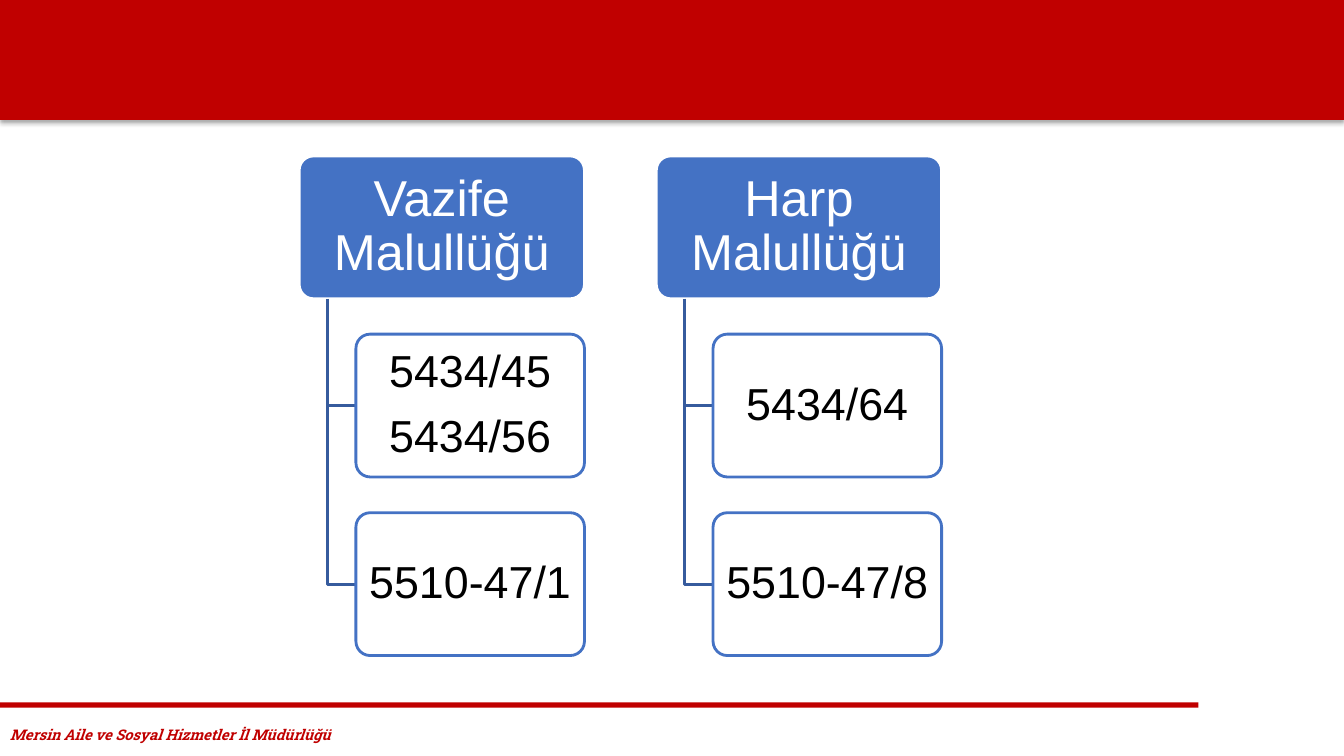
from lxml.etree import SubElement
from pptx import Presentation
from pptx.dml.color import RGBColor
from pptx.enum.shapes import MSO_SHAPE
from pptx.enum.text import MSO_ANCHOR, PP_ALIGN
from pptx.oxml.ns import qn
from pptx.util import Cm, Pt

COLORS = {
    "red": "C00000",
    "blue": "4472C4",
    "branch": "365B9D",
    "white": "FFFFFF",
    "black": "000000",
}
COLUMNS = [
    ("Vazife Malullüğü", [["5434/45", "5434/56"], ["5510-47/1"]]),
    ("Harp Malullüğü", [["5434/64"], ["5510-47/8"]]),
]

# Lengths in centimetres
COLUMN_LEFT, COLUMN_PITCH = 7.54, 9.0
BOX_HEIGHT = 3.6
HEADER_TOP, HEADER_WIDTH = 3.93, 7.19
LEAF_TOP, LEAF_PITCH, LEAF_WIDTH = 8.42, 4.5, 5.76
LEAF_INDENT, STEM_INDENT = 1.43, 0.72


def rgb(name):
    return RGBColor.from_string(COLORS[name])


def add_span(para, text, size, color, font):
    span = para.add_run()
    span.text = text
    span.font.size = Pt(size)
    span.font.name = font
    span.font.color.rgb = rgb(color)
    return span


def add_bar(page, top, width, height):
    bar = page.shapes.add_shape(MSO_SHAPE.RECTANGLE, 0, Cm(top), Cm(width), Cm(height))
    bar.shadow.inherit = False
    bar.fill.solid()
    bar.fill.fore_color.rgb = rgb("red")
    bar.line.fill.background()
    return bar


def add_drop_shadow(shape):
    effects = shape._element.spPr.find(qn("a:effectLst"))
    shadow = SubElement(effects, qn("a:outerShdw"), blurRad=str(Pt(3.5)),
                        dist=str(Pt(2.2)), dir="5400000", algn="t", rotWithShape="0")
    color = SubElement(shadow, qn("a:srgbClr"), val=COLORS["black"])
    SubElement(color, qn("a:alpha"), val="32000")


def add_box(page, left, top, width, lines, size, fill, line, color):
    """Add a rounded box with one centred paragraph per line of text."""
    box = page.shapes.add_shape(MSO_SHAPE.ROUNDED_RECTANGLE, Cm(left), Cm(top),
                                Cm(width), Cm(BOX_HEIGHT))
    box.adjustments[0] = 0.1
    box.shadow.inherit = False
    box.fill.solid()
    box.fill.fore_color.rgb = rgb(fill)
    box.line.color.rgb = rgb(line)
    box.line.width = Pt(2)

    frame = box.text_frame
    frame.word_wrap = True
    frame.vertical_anchor = MSO_ANCHOR.MIDDLE
    frame.margin_left = frame.margin_right = Cm(0.15)
    frame.margin_top = frame.margin_bottom = Cm(0.1)
    for index, text in enumerate(lines):
        para = frame.add_paragraph() if index else frame.paragraphs[0]
        para.alignment = PP_ALIGN.CENTER
        para.line_spacing = 0.9
        para.space_before = Pt(12 if index else 0)
        add_span(para, text, size, color, "Arial")


def add_branch(page, left, top, right, bottom):
    """Add an open elbow going down and then right."""
    builder = page.shapes.build_freeform(Cm(left), Cm(top))
    builder.add_line_segments([(Cm(left), Cm(bottom)), (Cm(right), Cm(bottom))],
                              close=False)
    branch = builder.convert_to_shape()
    branch.shadow.inherit = False
    branch.fill.background()
    branch.line.color.rgb = rgb("branch")
    branch.line.width = Pt(2)


def add_column(page, left, title, leaves):
    add_box(page, left, HEADER_TOP, HEADER_WIDTH, [title], 36, "blue", "white", "white")
    leaf_left = left + LEAF_INDENT
    for row, lines in enumerate(leaves):
        top = LEAF_TOP + row * LEAF_PITCH
        add_branch(page, left + STEM_INDENT, HEADER_TOP + BOX_HEIGHT,
                   leaf_left, top + BOX_HEIGHT / 2)
        add_box(page, leaf_left, top, LEAF_WIDTH, lines, 32, "white", "blue", "black")


def add_footer(page, text):
    footer = page.shapes.add_textbox(0, Cm(18.16), Cm(13.64), Cm(0.74))
    footer.text_frame.word_wrap = True
    span = add_span(footer.text_frame.paragraphs[0], text, 10.5, "red", "Roboto Slab")
    span.font.bold = True
    span.font.italic = True


def main():
    deck = Presentation()
    deck.slide_width, deck.slide_height = Cm(33.87), Cm(19.05)
    page = deck.slides.add_slide(deck.slide_layouts[6])

    add_footer(page, "Mersin Aile ve Sosyal Hizmetler İl Müdürlüğü")
    add_drop_shadow(add_bar(page, 0, 33.87, 3.02))
    add_bar(page, 17.7, 30.2, 0.13)
    for index, (title, leaves) in enumerate(COLUMNS):
        add_column(page, COLUMN_LEFT + index * COLUMN_PITCH, title, leaves)

    deck.save("out.pptx")


if __name__ == "__main__":
    main()
